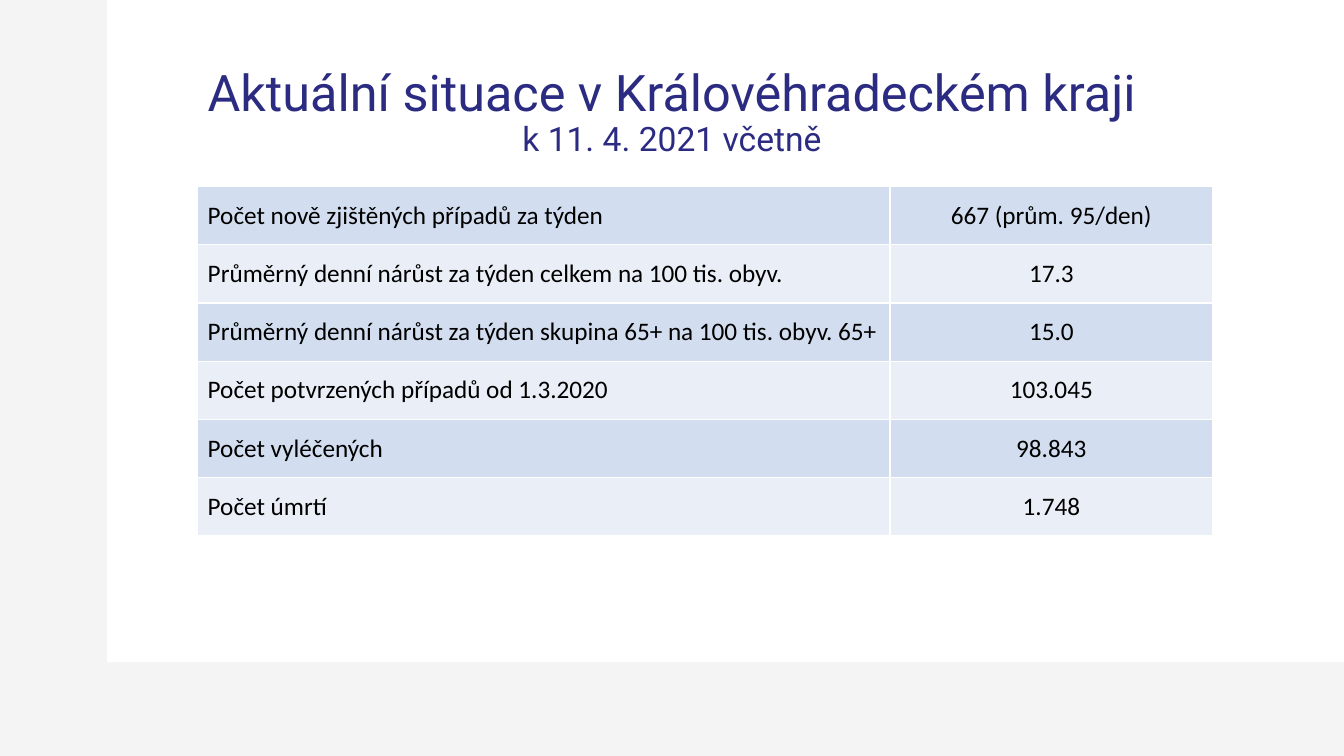
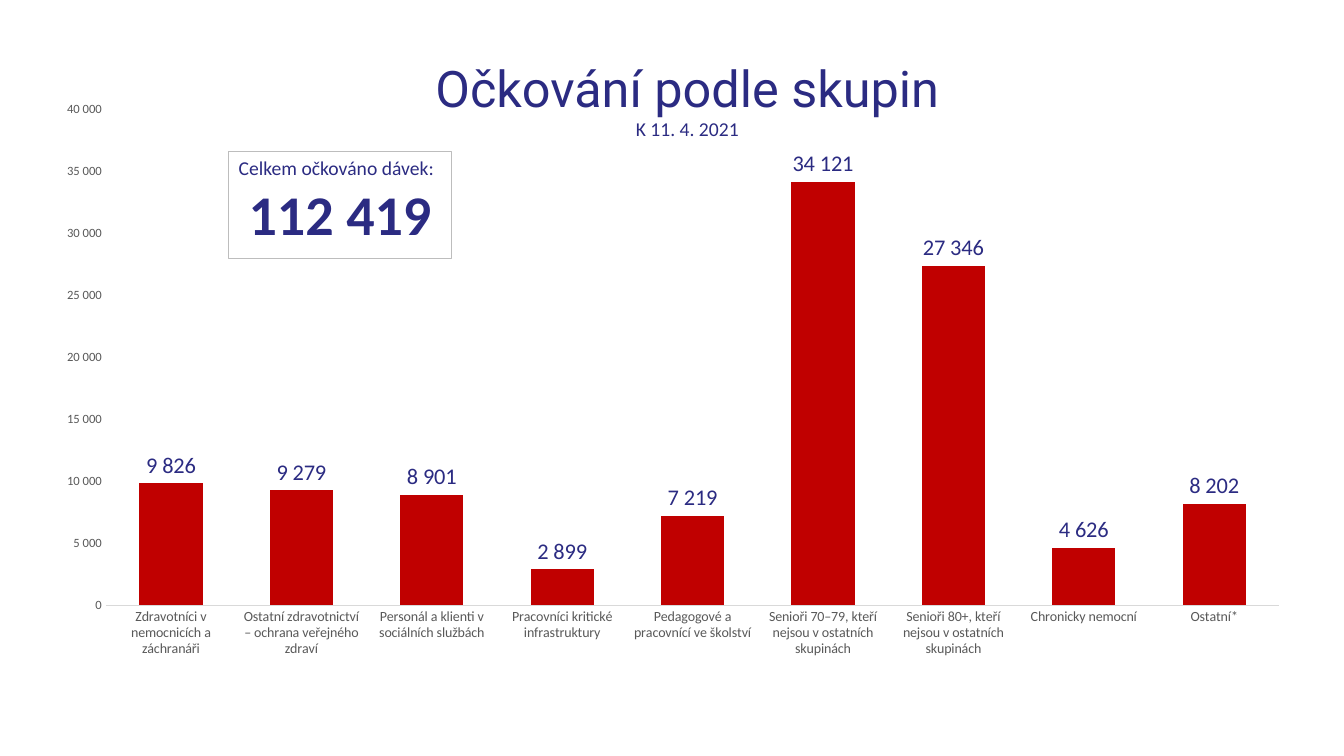
from lxml import etree
from pptx import Presentation
from pptx.chart.data import CategoryChartData
from pptx.dml.color import RGBColor
from pptx.enum.chart import XL_CHART_TYPE, XL_LABEL_POSITION, XL_TICK_MARK
from pptx.enum.shapes import MSO_SHAPE
from pptx.enum.text import MSO_ANCHOR, MSO_AUTO_SIZE, PP_ALIGN
from pptx.oxml import parse_xml
from pptx.oxml.ns import nsdecls, qn
from pptx.util import Pt

COLUMNS = XL_CHART_TYPE.COLUMN_CLUSTERED
OUTSIDE = XL_LABEL_POSITION.OUTSIDE_END
NO_TICK = XL_TICK_MARK.NONE
RECTANGLE = MSO_SHAPE.RECTANGLE
TOP, MIDDLE = MSO_ANCHOR.TOP, MSO_ANCHOR.MIDDLE
LEFT, CENTER = PP_ALIGN.LEFT, PP_ALIGN.CENTER

COLORS = {name: RGBColor.from_string(value) for name, value in {
    "navy": "2B2B82", "red": "C00000", "black": "000000", "white": "FFFFFF",
    "backdrop": "F4F4F4", "row_dark": "D2DEEF", "row_light": "EAEFF7",
    "axis_text": "595959", "axis_line": "D9D9D9", "frame": "BDBDBD",
}.items()}
TITLE_FONT, BODY_FONT = "Roboto", "Calibri"
NUMBER_FORMAT = r"[$-10405]#\ ##0;\(#\ ##0\)"


def write(para, text, size=18, font=BODY_FONT, color="navy", bold=False,
          align=LEFT, spacing=1.0):
    para.alignment = align
    para.line_spacing = spacing
    span = para.add_run()
    span.text = text
    span.font.size = Pt(size)
    span.font.name = font
    span.font.color.rgb = COLORS[color]
    span.font.bold = bold


def add_titled_page(place, lines, spacing):
    page = deck.slides.add_slide(deck.slide_layouts[5])
    title = page.shapes.title
    title.left, title.top, title.width, title.height = map(Pt, place)
    frame = title.text_frame
    frame.auto_size = MSO_AUTO_SIZE.NONE
    frame.vertical_anchor = MIDDLE
    for index, (text, size, font) in enumerate(lines):
        para = frame.add_paragraph() if index else frame.paragraphs[0]
        write(para, text, size=size, font=font, align=CENTER, spacing=spacing)
    return page


deck = Presentation()
deck.slide_width, deck.slide_height = Pt(960), Pt(540)

page = add_titled_page((66, 29, 828, 104), [
    ("Aktuální situace v Královéhradeckém kraji", 36, TITLE_FONT),
    ("k 11. 4. 2021 včetně", 24, TITLE_FONT),
], 0.9)
page.background.fill.solid()
page.background.fill.fore_color.rgb = COLORS["backdrop"]

panel = page.shapes.add_shape(RECTANGLE, Pt(76.5), 0, Pt(883.5), Pt(473))
panel.shadow.inherit = False
panel.fill.solid()
panel.fill.fore_color.rgb = COLORS["white"]
panel.line.fill.background()
page.shapes.title.element.addprevious(panel.element)

situation = [
    ("Počet nově zjištěných případů za týden", "667 (prům. 95/den)"),
    ("Průměrný denní nárůst za týden celkem na 100 tis. obyv.", "17.3"),
    ("Průměrný denní nárůst za týden skupina 65+ na 100 tis. obyv. 65+", "15.0"),
    ("Počet potvrzených případů od 1.3.2020", "103.045"),
    ("Počet vyléčených", "98.843"),
    ("Počet úmrtí", "1.748"),
]
row_height = 41.6
table = page.shapes.add_table(len(situation), 2, Pt(141.2), Pt(133.2), Pt(725),
                              Pt(row_height * len(situation))).table
table.first_row = False
table.horz_banding = False
for column, width in zip(table.columns, (494.6, 230.4)):
    column.width = Pt(width)
for row_index, texts in enumerate(situation):
    table.rows[row_index].height = Pt(row_height)
    for column_index, text in enumerate(texts):
        cell = table.cell(row_index, column_index)
        cell.vertical_anchor = MIDDLE
        write(cell.text_frame.paragraphs[0], text, color="black",
              align=CENTER if column_index else LEFT)
        properties = cell._tc.get_or_add_tcPr()
        for side in ("lnL", "lnR", "lnT", "lnB"):
            border = etree.SubElement(properties, qn(f"a:{side}"), w=str(Pt(1)))
            fill = etree.SubElement(border, qn("a:solidFill"))
            etree.SubElement(fill, qn("a:srgbClr"), val=str(COLORS["white"]))
        cell.fill.solid()
        cell.fill.fore_color.rgb = COLORS["row_light" if row_index % 2 else "row_dark"]

page = add_titled_page((191, 35, 600, 71), [
    ("Očkování podle skupin", 36, TITLE_FONT),
    ("K 11. 4. 2021", 14, BODY_FONT),
], 1.0)

doses = {
    "Zdravotníci v nemocnicích a záchranáři": 9826,
    "Ostatní zdravotnictví – ochrana veřejného zdraví": 9279,
    "Personál a klienti v sociálních službách": 8901,
    "Pracovníci kritické infrastruktury": 2899,
    "Pedagogové a pracovnící ve školství": 7219,
    "Senioři 70–79, kteří nejsou v ostatních skupinách": 34121,
    "Senioři 80+, kteří nejsou v ostatních skupinách": 27346,
    "Chronicky nemocní": 4626,
    "Ostatní*": 8202,
}
data = CategoryChartData()
data.categories = list(doses)
data.add_series("Očkování", list(doses.values()))
chart = page.shapes.add_chart(COLUMNS, Pt(34.6), Pt(24.5), Pt(890), Pt(491), data).chart
chart.has_title = False
chart.has_legend = False
chart.font.name = BODY_FONT
chart.font.size = Pt(10)

plot = chart.plots[0]
plot.vary_by_categories = False
plot.gap_width = 106
plot.overlap = -27
bars = plot.series[0].format.fill
bars.solid()
bars.fore_color.rgb = COLORS["red"]
plot.has_data_labels = True
labels = plot.data_labels
labels.show_value = True
labels.position = OUTSIDE
labels.number_format = NUMBER_FORMAT
labels.number_format_is_linked = False

value_axis, category_axis = chart.value_axis, chart.category_axis
for item, size, color in ((labels, 16, "navy"), (value_axis, 9, "axis_text"),
                          (category_axis, 10, "axis_text")):
    font = item.font if item is labels else item.tick_labels.font
    font.name = BODY_FONT
    font.size = Pt(size)
    font.color.rgb = COLORS[color]
for axis in (value_axis, category_axis):
    axis.has_major_gridlines = False
    axis.major_tick_mark = axis.minor_tick_mark = NO_TICK
value_axis.minimum_scale, value_axis.maximum_scale = 0, 40000
value_axis.major_unit = 5000
value_axis.format.line.fill.background()
value_axis.tick_labels.number_format = NUMBER_FORMAT
value_axis.tick_labels.number_format_is_linked = False
category_axis.format.line.color.rgb = COLORS["axis_line"]
category_axis.format.line.width = Pt(0.75)

chart_node = chart._chartSpace.find(qn("c:chart"))
chart_node.addnext(parse_xml(
    f'<c:spPr {nsdecls("c", "a")}><a:noFill/><a:ln><a:noFill/></a:ln></c:spPr>'))
plot_area = chart_node.find(qn("c:plotArea"))
for layout in plot_area.findall(qn("c:layout")):
    plot_area.remove(layout)
layout = parse_xml(f'<c:layout {nsdecls("c")}><c:manualLayout/></c:layout>')
for tag, value in (("layoutTarget", "inner"), ("xMode", "edge"), ("yMode", "edge"),
                   ("x", 0.046), ("y", 0.109), ("w", 0.942), ("h", 0.722)):
    etree.SubElement(layout[0], qn(f"c:{tag}"), val=str(value))
plot_area.insert(0, layout)

total_box = page.shapes.add_shape(RECTANGLE, Pt(163.4), Pt(108), Pt(159), Pt(77))
total_box.shadow.inherit = False
total_box.fill.solid()
total_box.fill.fore_color.rgb = COLORS["white"]
total_box.line.color.rgb = COLORS["frame"]
total_box.line.width = Pt(0.75)
frame = total_box.text_frame
frame.word_wrap = True
frame.vertical_anchor = TOP
write(frame.paragraphs[0], "Celkem očkováno dávek:", size=14)
write(frame.add_paragraph(), "112 419", size=40, bold=True, align=CENTER)

deck.save("out.pptx")
